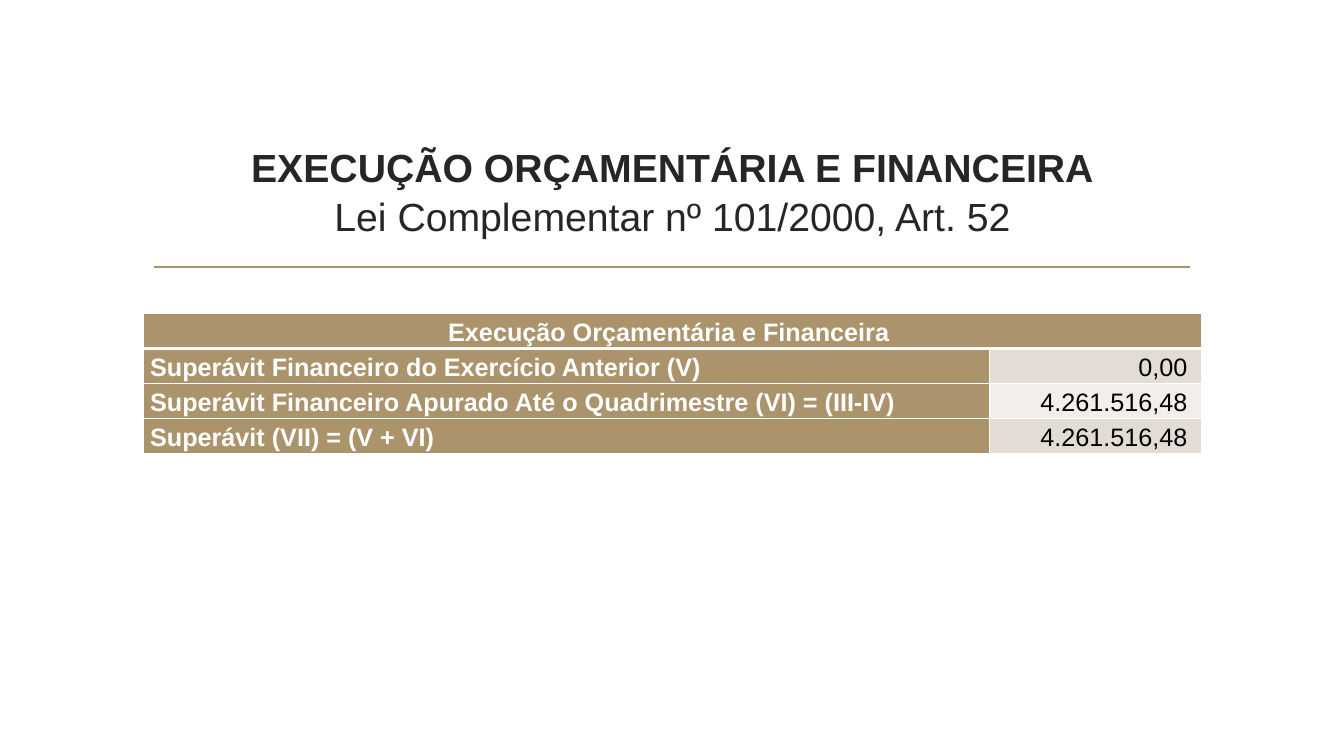
"""Build the budget execution slide with its title, rule and surplus table."""
from dataclasses import dataclass

import lxml.etree
import pptx
import pptx.dml.color
import pptx.enum.shapes
import pptx.enum.text
import pptx.oxml.ns
import pptx.util

Pt = pptx.util.Pt
ALIGN = pptx.enum.text.PP_ALIGN
MIDDLE = pptx.enum.text.MSO_ANCHOR.MIDDLE
FONT = "Arial"
COLORS = {
    "gold": "AB946B",
    "dark": "262626",
    "black": "000000",
    "white": "FFFFFF",
    "band": "E2DCD4",
    "light": "F1EEEB",
}
LEFT, WIDTH = 102.24, 756
COLUMN_WIDTHS = (604.8, 151.2)
ROW_HEIGHT = 25


@dataclass
class Entry:
    label: str
    amount: str
    fill: str


ENTRIES = [
    Entry("Superávit Financeiro do Exercício Anterior (V)", "0,00 ", "band"),
    Entry("Superávit Financeiro Apurado Até o Quadrimestre (VI) = (III-IV)", "4.261.516,48 ", "light"),
    Entry("Superávit (VII) = (V + VI)", "4.261.516,48 ", "band"),
]


def rgb(name: str) -> pptx.dml.color.RGBColor:
    """Return the named colour."""
    return pptx.dml.color.RGBColor.from_string(COLORS[name])


def style_font(font, size: float, color: str, bold: bool) -> None:
    """Set the face, size, colour and weight of a font."""
    font.name, font.size, font.bold = FONT, Pt(size), bold
    font.color.rgb = rgb(color)


def add_borders(cell, top: float, bottom: float) -> None:
    """Give a cell white borders, one point wide at the sides."""
    tc_pr = cell._tc.get_or_add_tcPr()
    qn = pptx.oxml.ns.qn
    for side, width in (("L", 1), ("R", 1), ("T", top), ("B", bottom)):
        ln = lxml.etree.SubElement(tc_pr, qn(f"a:ln{side}"), w=str(Pt(width)))
        fill = lxml.etree.SubElement(ln, qn("a:solidFill"))
        lxml.etree.SubElement(fill, qn("a:srgbClr"), val=COLORS["white"])


def fill_cell(cell, text: str, fill: str, color: str, bold: bool, align) -> None:
    """Write and format one table cell."""
    cell.fill.solid()
    cell.fill.fore_color.rgb = rgb(fill)
    cell.vertical_anchor = MIDDLE
    cell.margin_left = cell.margin_right = Pt(5)
    cell.margin_top = cell.margin_bottom = Pt(0.7)
    cell.text_frame.text = text
    p = cell.text_frame.paragraphs[0]
    p.alignment, p.line_spacing = align, 1.15
    style_font(p.runs[0].font, 18, color, bold)


def add_title(s) -> None:
    """Place and format the two-line title."""
    sp = s.shapes.title
    sp.left, sp.top, sp.width, sp.height = Pt(LEFT), Pt(77), Pt(WIDTH), Pt(103)
    tf = sp.text_frame
    tf.text = "EXECUÇÃO ORÇAMENTÁRIA E FINANCEIRA\vLei Complementar nº 101/2000, Art. 52"
    tf.word_wrap, tf.vertical_anchor = True, MIDDLE
    tf.auto_size = pptx.enum.text.MSO_AUTO_SIZE.NONE
    tf.margin_top, tf.margin_bottom = Pt(18), Pt(3.6)
    p = tf.paragraphs[0]
    p.alignment, p.line_spacing = ALIGN.CENTER, 1.04
    for r, bold in zip(p.runs, (True, False)):
        style_font(r.font, 28, "dark", bold)


def add_rule(s) -> None:
    """Draw the gold line under the title."""
    line = s.shapes.add_connector(
        pptx.enum.shapes.MSO_CONNECTOR.STRAIGHT, Pt(110.2), Pt(190.8), Pt(850.3), Pt(190.8)
    )
    line.line.color.rgb, line.line.width = rgb("gold"), Pt(1.25)
    lxml.etree.SubElement(line._element.spPr, pptx.oxml.ns.qn("a:effectLst"))


def add_surplus_table(s) -> None:
    """Add the table of surplus amounts."""
    rows = len(ENTRIES) + 1
    table = s.shapes.add_table(
        rows, 2, Pt(LEFT), Pt(223.9), Pt(WIDTH), Pt(rows * ROW_HEIGHT)
    ).table
    for column, width in zip(table.columns, COLUMN_WIDTHS):
        column.width = Pt(width)
    for i, row in enumerate(table.rows):
        row.height = Pt(ROW_HEIGHT)
        for cell in row.cells:
            add_borders(cell, 3 if i == 1 else 1, 3 if i == 0 else 1)
    header = table.cell(0, 0)
    header.merge(table.cell(0, 1))
    fill_cell(header, "Execução Orçamentária e Financeira ", "gold", "white", True, ALIGN.CENTER)
    for i, entry in enumerate(ENTRIES, 1):
        fill_cell(table.cell(i, 0), entry.label, "gold", "white", True, ALIGN.LEFT)
        fill_cell(table.cell(i, 1), entry.amount, entry.fill, "black", False, ALIGN.RIGHT)


def main() -> None:
    """Build and save the slide."""
    prs = pptx.Presentation()
    prs.slide_width, prs.slide_height = Pt(960), Pt(540)
    s = prs.slides.add_slide(prs.slide_layouts[5])
    add_rule(s)
    add_title(s)
    add_surplus_table(s)
    prs.save("out.pptx")


if __name__ == "__main__":
    main()
